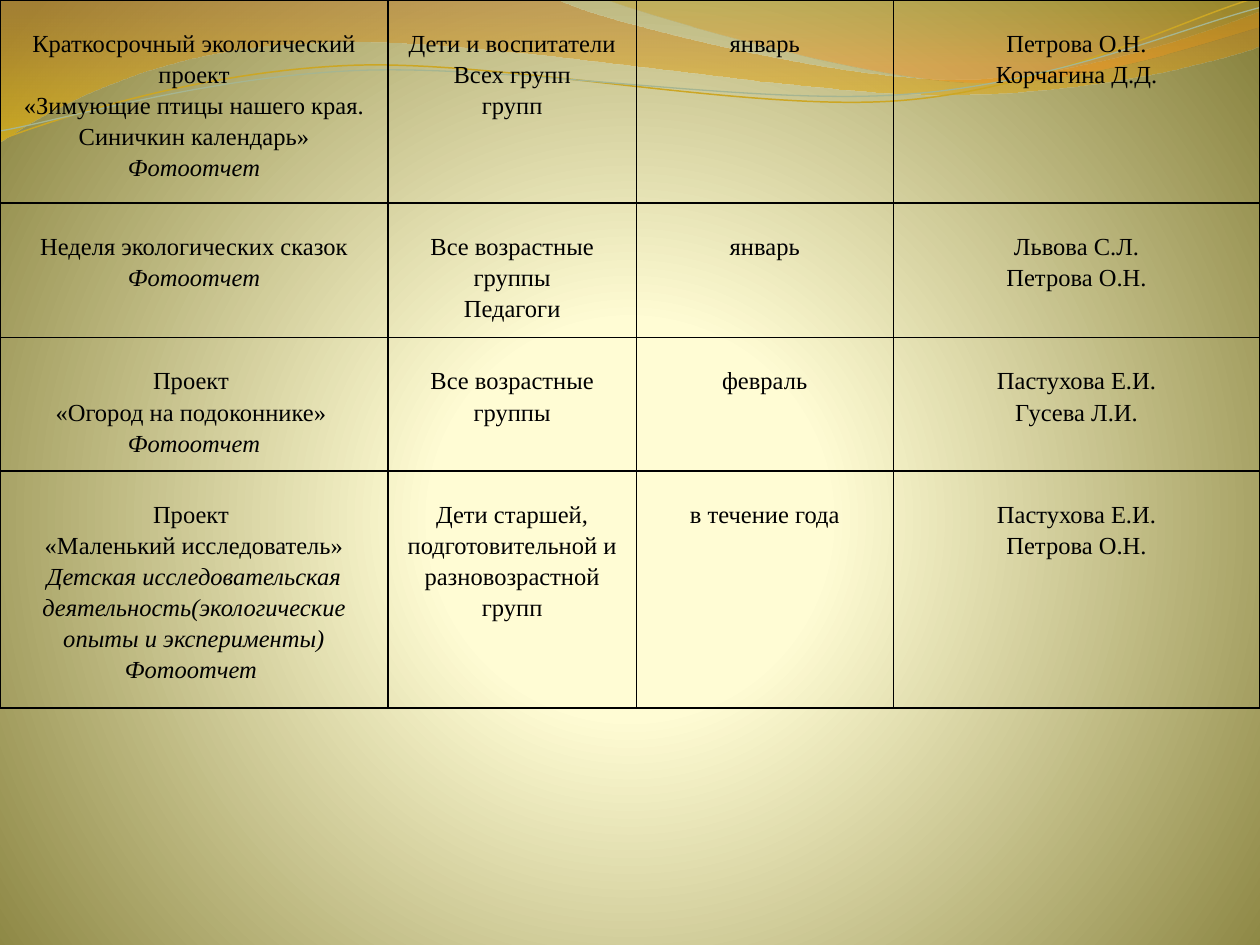
from pptx import Presentation
from pptx.dml.color import RGBColor
from pptx.enum.text import PP_ALIGN
from pptx.oxml import parse_xml
from pptx.oxml.ns import nsdecls, qn
from pptx.util import Inches, Pt

BLACK = RGBColor(0x00, 0x00, 0x00)
CREAM = RGBColor(0xFF, 0xFC, 0xD4)
OLIVE = RGBColor(0x89, 0x83, 0x3F)
BRONZE = RGBColor(0xC0, 0x7A, 0x28)
AMBER = RGBColor(0xF7, 0xBF, 0x00)
GOLD = RGBColor(0xC0, 0x97, 0x09)
ORANGE = RGBColor(0xF5, 0x93, 0x20)
LINE_GOLD = RGBColor(0xCC, 0xA6, 0x24)
LINE_GREEN = RGBColor(0xA5, 0xB5, 0x92)

FONT = "Times New Roman"
REPORT = "Фотоотчет"
RESEARCH = "Детская исследовательская деятельность(экологические опыты и эксперименты)"
ITALIC_TEXTS = {REPORT, RESEARCH}
COLUMN_WIDTHS = [3.08, 1.97, 2.04, 2.91]
ROW_HEIGHTS = [1.61, 1.07, 1.06, 1.88]
EVENTS = [
    [
        ["Краткосрочный экологический проект",
         "«Зимующие птицы нашего края. Синичкин календарь»", REPORT],
        ["Дети и воспитатели", "Всех групп", "групп"],
        ["январь"],
        ["Петрова О.Н.", "Корчагина Д.Д."],
    ],
    [
        ["Неделя экологических сказок", REPORT],
        ["Все возрастные группы", "Педагоги"],
        ["январь"],
        ["Львова С.Л.", "Петрова О.Н."],
    ],
    [
        ["Проект ", "«Огород на подоконнике» ", REPORT],
        ["Все возрастные группы"],
        ["февраль"],
        ["Пастухова Е.И.", "Гусева Л.И."],
    ],
    [
        ["Проект ", "«Маленький исследователь»", RESEARCH, REPORT + " "],
        ["Дети старшей, подготовительной и разновозрастной групп"],
        ["в течение года"],
        ["Пастухова Е.И.", "Петрова О.Н."],
    ],
]

WIDE_WAVE = [
    (0, 0), (4.4, -0.01),
    (4.76, 0.17, 6.64, 0.63, 7.58, 0.63), (8.53, 0.63, 9.58, 0.26, 10, 0.09),
    (10.01, 0.36),
    (9.83, 0.44, 8.7, 0.76, 7.46, 0.75), (6.22, 0.75, 3.82, 0.28, 2.57, 0.34),
    (1.29, 0.36, 0.46, 0.83, -0.01, 1.13),
]
RIGHT_WAVE = [
    (4.79, -0.01),
    (5.09, 0.11, 6.82, 0.62, 7.69, 0.65), (8.56, 0.69, 9.61, 0.32, 10, 0.21),
    (10, 0),
]
GOLD_STRAND = [
    (0, 1.11),
    (0.48, 0.93, 1.58, 0.57, 2.77, 0.52), (3.95, 0.47, 5.93, 0.89, 7.13, 0.8),
    (8.33, 0.71, 9.38, 0.15, 9.98, -0.02),
]
GREEN_STRAND = [
    (0, 1.04),
    (0.47, 0.96, 1.64, 0.61, 2.83, 0.56), (4.03, 0.51, 5.97, 0.84, 7.17, 0.75),
    (8.36, 0.67, 9.41, 0.21, 10, 0.06),
]


def set_gradient(fill, container, stops, direction):
    fill.gradient()
    stop_xml = "".join(
        f'<a:gs pos="{position * 1000}"><a:srgbClr val="{color}">'
        f'<a:alpha val="{opacity * 1000}"/></a:srgbClr></a:gs>'
        for position, color, opacity in stops
    )
    gradient = parse_xml(
        f'<a:gradFill {nsdecls("a")} rotWithShape="1">'
        f"<a:gsLst>{stop_xml}</a:gsLst>{direction}</a:gradFill>"
    )
    current = container.find(".//" + qn("a:gradFill"))
    current.getparent().replace(current, gradient)


def add_outline(page, left, top, segments, close):
    placed = [
        [(left + Inches(x), top + Inches(y)) for x, y in zip(segment[::2], segment[1::2])]
        for segment in segments
    ]
    builder = page.shapes.build_freeform(*placed[0][0])
    builder.add_line_segments([points[-1] for points in placed[1:]], close=close)
    shape = builder.convert_to_shape()
    shape.shadow.inherit = False
    straight_parts = shape.element.findall(".//" + qn("a:lnTo"))
    for straight, points in zip(straight_parts, placed[1:]):
        if len(points) == 3:
            point_xml = "".join(
                f'<a:pt x="{x - shape.left}" y="{y - shape.top}"/>' for x, y in points
            )
            curve = parse_xml(
                f'<a:cubicBezTo {nsdecls("a")}>{point_xml}</a:cubicBezTo>'
            )
            straight.getparent().replace(straight, curve)
    return shape


def add_waves(page, left, top):
    for segments, stops in (
        (WIDE_WAVE, [(0, BRONZE, 45), (100, AMBER, 55)]),
        (RIGHT_WAVE, [(0, GOLD, 30), (80, ORANGE, 45)]),
    ):
        wave = add_outline(page, left, top, segments, True)
        set_gradient(wave.fill, wave.element, stops, '<a:lin ang="5400000" scaled="1"/>')
        wave.line.fill.background()
    for segments, color, width in (
        (GOLD_STRAND, LINE_GOLD, 0.85),
        (GREEN_STRAND, LINE_GREEN, 0.75),
    ):
        strand = add_outline(page, left, top, segments, False)
        strand.fill.background()
        strand.line.color.rgb = color
        strand.line.width = Pt(width)


def format_cell(cell, lines):
    cell.margin_left = cell.margin_right = Inches(0.04)
    cell.margin_top, cell.margin_bottom = Inches(0.21), 0
    properties = cell._tc.get_or_add_tcPr()
    for side in ("lnL", "lnR", "lnT", "lnB"):
        properties.append(parse_xml(
            f'<a:{side} {nsdecls("a")} w="{Pt(1)}"><a:solidFill>'
            f'<a:srgbClr val="{BLACK}"/></a:solidFill></a:{side}>'
        ))
    cell.fill.background()
    cell.text_frame.text = "\n".join(lines)
    for para in cell.text_frame.paragraphs:
        para.alignment = PP_ALIGN.CENTER
        para.line_spacing = 1.15
        for span in para.runs:
            span.font.name = FONT
            span.font.size = Pt(14)
            span.font.color.rgb = BLACK
            span.font.italic = para.text.strip() in ITALIC_TEXTS


def add_events_table(page, left, top, width, height):
    table = page.shapes.add_table(
        len(ROW_HEIGHTS), len(COLUMN_WIDTHS), left, top, width, height
    ).table
    table.first_row = table.horz_banding = False
    for column, column_width in zip(table.columns, COLUMN_WIDTHS):
        column.width = Inches(column_width)
    for row, row_height, event in zip(table.rows, ROW_HEIGHTS, EVENTS):
        row.height = Inches(row_height)
        for cell, lines in zip(row.cells, event):
            format_cell(cell, lines)


def main():
    deck = Presentation()
    deck.slide_width, deck.slide_height = Inches(10), Inches(7.5)
    page = deck.slides.add_slide(deck.slide_layouts[6])
    set_gradient(
        page.background.fill, page.element,
        [(0, CREAM, 100), (25, CREAM, 100), (100, OLIVE, 100)],
        '<a:path path="circle"><a:fillToRect l="10000" t="110000" r="10000" b="100000"/></a:path>',
    )
    add_waves(page, Inches(0), Inches(0))
    add_events_table(page, Inches(0), Inches(0), Inches(10), Inches(sum(ROW_HEIGHTS)))
    deck.save("out.pptx")


if __name__ == "__main__":
    main()
